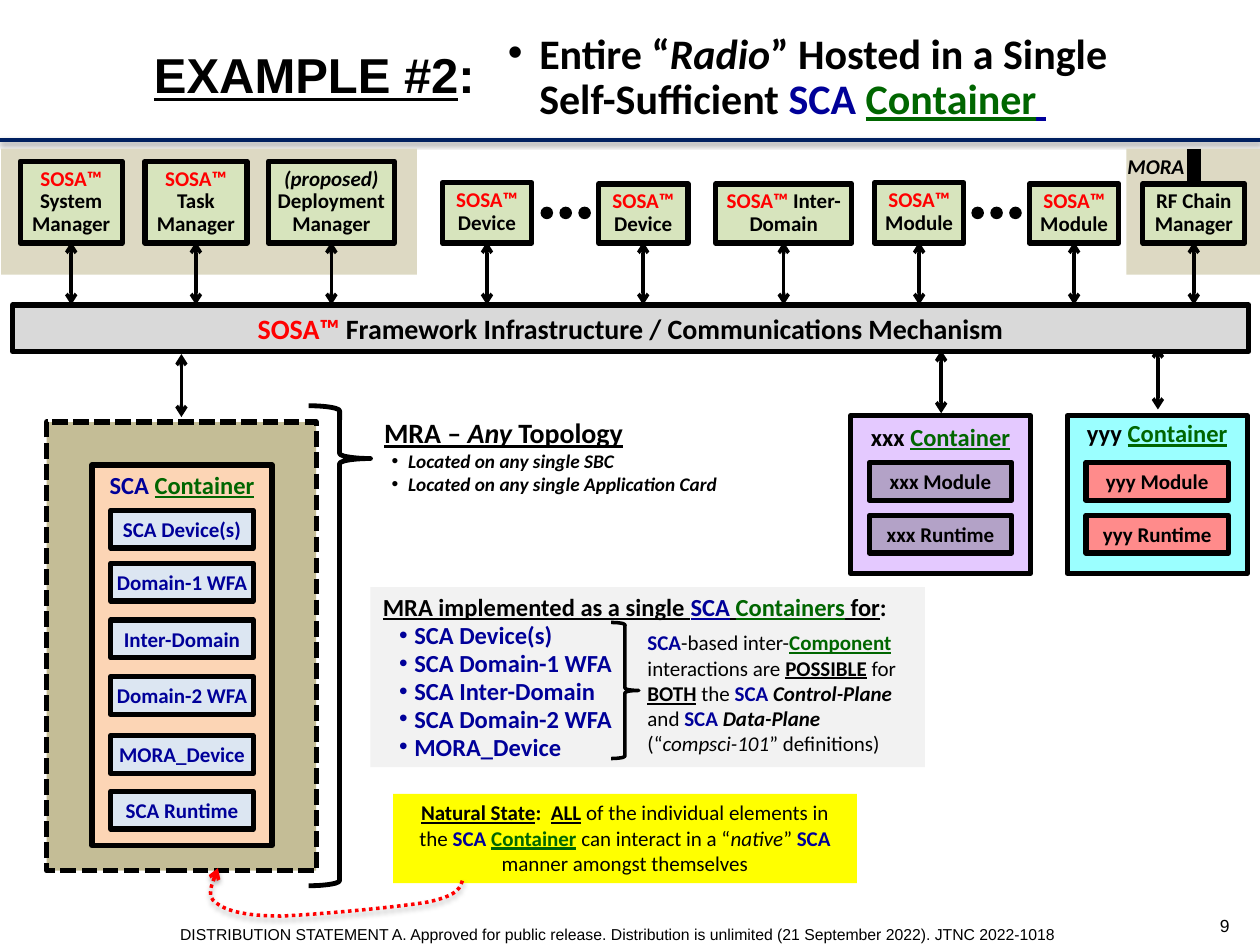
from lxml.etree import SubElement
from pptx import Presentation
from pptx.dml.color import RGBColor
from pptx.enum.dml import MSO_LINE as DASH
from pptx.enum.shapes import MSO_CONNECTOR, MSO_SHAPE as SHAPE
from pptx.enum.text import MSO_ANCHOR as ANCHOR, MSO_AUTO_SIZE, PP_ALIGN as ALIGN
from pptx.oxml.ns import qn
from pptx.util import Inches, Pt

BLACK, RED, NAVY, GREEN = "000000", "FF0000", "000099", "006600"
SAND, OLIVE, BLUE = "DDD9C3", "D7E4BD", "DCE6F2"

HEADING = [("Entire “", "b"), ("Radio", "bi"), ("” Hosted in a Single Self-Sufficient ", "b"),
           ("SCA ", "b", NAVY), ("Container", "bu", GREEN), (" ", "bu", NAVY)]
EXAMPLE = [("EXAMPLE #2", "bu"), (":", "b")]
FOOTER = ("DISTRIBUTION STATEMENT A. Approved for public release. "
          "Distribution is unlimited (21 September 2022). JTNC 2022-1018")
PAGE_NUMBER = "9"

SOSA = ("SOSA™ ", "b", RED)
MANAGERS = [
    (0.16, 1.28, 0.81, [SOSA, ("System Manager", "b")]),
    (1.15, 1.28, 0.81, [SOSA, ("Task Manager", "b")]),
    (2.13, 1.28, 1, [("(proposed) ", "bi"), ("Deployment Manager", "b")]),
    (3.51, 1.45, 0.71, [SOSA, ("Device", "b")]),
    (4.75, 1.46, 0.71, [SOSA, ("Device", "b")]),
    (5.68, 1.46, 1.08, [SOSA, ("Inter-Domain", "b")]),
    (6.94, 1.45, 0.71, [SOSA, ("Module", "b")]),
    (8.17, 1.46, 0.71, [SOSA, ("Module", "b")]),
    (9.07, 1.46, 0.81, [("RF Chain Manager", "b")]),
]
MANAGER_BOTTOM = 1.93
MANAGER_ZONES = [(0.01, 1.18, 3.3, 1), (8.94, 1.18, 1.06, 1)]
ELLIPSIS_STARTS = [4.29, 7.71]
FRAMEWORK = [SOSA, ("Framework Infrastructure / Communications Mechanism", "b")]

CONTAINERS = [
    {"name": "SCA", "colour": NAVY, "box": (0.73, 3.69, 1.43, 3.02), "title_top": 3.68,
     "fill": "FCD5B5", "part_fill": BLUE, "arrow": (1.44, 2.81),
     "parts": [("SCA Device(s)", 4.05), ("Domain-1 WFA", 4.47), ("Inter-Domain", 4.92),
               ("Domain-2 WFA", 5.37), ("MORA_Device", 5.84), ("SCA Runtime", 6.28)]},
    {"name": "xxx", "colour": BLACK, "box": (6.75, 3.3, 1.43, 1.25), "title_top": 3.3,
     "fill": "E4C9FF", "part_fill": "B3A2C7", "arrow": (7.47, 2.78),
     "parts": [("xxx Module", 3.67), ("xxx Runtime", 4.09)]},
    {"name": "yyy", "colour": BLACK, "box": (8.47, 3.3, 1.43, 1.25), "title_top": 3.27,
     "fill": "9BFFFF", "part_fill": "FF8B8B", "arrow": (9.19, 2.75),
     "parts": [("yyy Module", 3.67), ("yyy Runtime", 4.09)]},
]

TOPOLOGY = [("MRA – ", "bu"), ("Any", "biu"), (" Topology", "bu")]
LOCATIONS = ["Located on any single SBC", "Located on any single Application Card"]
MRA_LEAD = [("MRA implemented as a single ", "bu"), ("SCA", "bu", NAVY), (" ", "bu"),
            ("Containers", "bu", GREEN), (" for", "bu"), (":", "b")]
MRA_PARTS = ["SCA Device(s)", "SCA Domain-1 WFA", "SCA Inter-Domain", "SCA Domain-2 WFA",
             "MORA_Device"]
INTERACTIONS = [("SCA", "b", NAVY), ("-based inter-", ""), ("Component", "bu", GREEN),
                (" interactions are ", ""), ("POSSIBLE", "bu"), (" for ", ""), ("BOTH", "bu"),
                (" the ", ""), ("SCA ", "b", NAVY), ("Control-Plane", "bi"), (" and ", ""),
                ("SCA ", "b", NAVY), ("Data-Plane", "bi")]
DEFINITIONS = [("(“", ""), ("compsci-101", "i"), ("” definitions)", "")]
NATURAL_STATE = [("Natural State", "bu"), (":  ", "b"), ("ALL", "bu"),
                 (" of the individual elements in the ", ""), ("SCA ", "b", NAVY),
                 ("Container", "bu", GREEN), (" can interact in a “", ""), ("native", "i"),
                 ("” ", ""), ("SCA ", "b", NAVY), ("manner amongst themselves", "")]
LOOP_START = (3.67, 6.99)
LOOP_CURVES = [((3.65, 7.05), (3.63, 7.11), (3.39, 7.16)),
               ((3.15, 7.2), (2.51, 7.26), (2.23, 7.27)),
               ((1.95, 7.27), (1.79, 7.23), (1.71, 7.16)),
               ((1.62, 7.1), (1.71, 6.97), (1.73, 6.89))]


def rgb(colour):
    return RGBColor.from_string(colour)


def style(font, marks="", colour=BLACK):
    font.bold, font.italic, font.underline = "b" in marks, "i" in marks, "u" in marks
    font.color.rgb = rgb(colour)


def para(runs, size=12, align=ALIGN.CENTER, spacing=None, indent=None, font="Calibri"):
    return dict(runs=runs, size=size, align=align, spacing=spacing, indent=indent, font=font)


def write(shape, paras, anchor=ANCHOR.TOP, insets=(0.1, 0.05, 0.1, 0.05), wrap=True):
    frame = shape.text_frame
    frame.auto_size, frame.word_wrap, frame.vertical_anchor = MSO_AUTO_SIZE.NONE, wrap, anchor
    (frame.margin_left, frame.margin_top,
     frame.margin_right, frame.margin_bottom) = map(Inches, insets)
    for i, content in enumerate(paras):
        paragraph = frame.add_paragraph() if i else frame.paragraphs[0]
        paragraph.alignment = content["align"]
        if content["spacing"]:
            paragraph.line_spacing = Pt(content["spacing"])
        if content["indent"]:
            margin, hang = content["indent"]
            props = paragraph._p.get_or_add_pPr()
            props.set("marL", str(Inches(margin)))
            props.set("indent", str(Inches(-hang)))
            SubElement(props, qn("a:buFont"), typeface="Arial")
            SubElement(props, qn("a:buChar"), char="•")
        paragraph.font.name, paragraph.font.size = content["font"], Pt(content["size"])
        shared = len({run[1:] for run in content["runs"]}) == 1
        if shared:
            style(paragraph.font, *content["runs"][0][1:])
        for text, *look in content["runs"]:
            run = paragraph.add_run()
            run.text = text
            if not shared:
                style(run.font, *look)


def text_box(at, paras, **options):
    write(slide.shapes.add_textbox(*map(Inches, at)), paras, **options)


def outline(line, width, colour=BLACK):
    line.color.rgb, line.width = rgb(colour), Pt(width)


def block(at, fill=None, width=0, kind=SHAPE.RECTANGLE):
    shape = slide.shapes.add_shape(kind, *map(Inches, at))
    shape.shadow.inherit = False
    if fill:
        shape.fill.solid()
        shape.fill.fore_color.rgb = rgb(fill)
    else:
        shape.fill.background()
    if width:
        outline(shape.line, width)
    else:
        shape.line.fill.background()
    return shape


def arrowheads(line, *ends):
    for end in ends:
        SubElement(line._get_or_add_ln(), qn(f"a:{end}"), type="arrow")


def drop_shadow(effects, alpha, distance):
    shadow = SubElement(effects, qn("a:outerShdw"), blurRad=str(Pt(3.1)),
                        dist=str(Pt(distance)), dir="5400000", rotWithShape="0")
    tint = SubElement(shadow, qn("a:srgbClr"), val=BLACK)
    SubElement(tint, qn("a:alpha"), val=str(alpha * 1000))


def connect(start, end, width=2, colour=BLACK):
    link = slide.shapes.add_connector(MSO_CONNECTOR.STRAIGHT, *map(Inches, start + end))
    outline(link.line, width, colour)
    return link, SubElement(link._element.spPr, qn("a:effectLst"))


def double_arrow(x, top, length=0.5):
    link, effects = connect((x, top), (x, top + length))
    arrowheads(link.line, "headEnd", "tailEnd")


def curve_points(start, curves, steps=12):
    for a, b, end in curves:
        for t in (n / steps for n in range(1, steps + 1)):
            s = 1 - t
            yield tuple(Inches(s**3 * p + 3 * s * s * t * q + 3 * s * t * t * r + t**3 * e)
                        for p, q, r, e in zip(start, a, b, end))
        start = end


deck = Presentation()
deck.slide_width, deck.slide_height = Inches(10), Inches(7.5)
slide = deck.slides.add_slide(deck.slide_layouts[5])

rule, rule_effects = connect((0, 1.11), (10, 1.11), colour="002060")
drop_shadow(rule_effects, 38, 1.6)
heading = slide.shapes.title
heading.left, heading.top, heading.width, heading.height = map(Inches, (3.93, 0.09, 5.01, 1.05))
write(heading, [para(HEADING, 24, ALIGN.LEFT, 26, (0.25, 0.25))], anchor=ANCHOR.MIDDLE)
text_box((0.78, 0.09, 3.43, 1.05), [para(EXAMPLE, 28, spacing=30, font="Arial")],
         anchor=ANCHOR.MIDDLE)
text_box((0, 7.34, 10, 0.15), [para([(FOOTER, "")], 9, font="Arial")], insets=(0, 0, 0.2, 0))
text_box((9.45, 7.19, 0.54, 0.31), [para([(PAGE_NUMBER, "")], 10, font="Arial")],
         anchor=ANCHOR.MIDDLE)

mra_frame = block((0.37, 3.35, 2.14, 3.56), "C4BD96", 3)
mra_frame.line.dash_style = DASH.SQUARE_DOT
for container in CONTAINERS:
    left, top, width, height = container["box"]
    block(container["box"], container["fill"], 3)
    title = [(container["name"] + " ", "b", container["colour"]), ("Container", "bu", GREEN)]
    text_box((left, container["title_top"], width, 0.34), [para(title, 14)], wrap=False)
    for name, part_top in container["parts"]:
        part = block((left + 0.15, part_top, 1.13, 0.3), container["part_fill"], 3)
        write(part, [para([(name, "b", container["colour"])])], insets=(0, 0.05, 0, 0.05))
    double_arrow(*container["arrow"])

mra_brace = block((2.45, 3.22, 0.49, 3.81), width=2.75, kind=SHAPE.RIGHT_BRACE)
mra_brace.adjustments[0], mra_brace.adjustments[1] = 0.083, 0.11
text_box((2.95, 3.25, 2.86, 0.74),
         [para(TOPOLOGY, 16, ALIGN.LEFT)]
         + [para([(place, "bi")], 11, ALIGN.LEFT, indent=(0.19, 0.13)) for place in LOCATIONS],
         wrap=False)
write(block((2.94, 4.66, 4.4, 1.43), "F2F2F2"),
      [para(MRA_LEAD, 14, ALIGN.LEFT, 16)]
      + [para([(part, "b", NAVY)], 14, ALIGN.LEFT, 16, (0.25, 0.12)) for part in MRA_PARTS],
      insets=(0.1, 0.05, 0.1, 0.03))
block((4.85, 4.94, 0.22, 1.08), width=2, kind=SHAPE.RIGHT_BRACE)
text_box((5.04, 4.95, 2.38, 1.11),
         [para(runs, align=ALIGN.LEFT) for runs in (INTERACTIONS, DEFINITIONS)])

write(block((0.1, 2.42, 9.81, 0.37), "D9D9D9", 3), [para(FRAMEWORK, 16)], anchor=ANCHOR.MIDDLE)
for zone in MANAGER_ZONES:
    block(zone, SAND)
for left, top, width, runs in MANAGERS:
    double_arrow(left + width / 2, MANAGER_BOTTOM - 0.01)
    manager = block((left, top, width, MANAGER_BOTTOM - top), OLIVE, 3)
    write(manager, [para(runs, spacing=13)], insets=(0, 0.05, 0, 0.05))
for start in ELLIPSIS_STARTS:
    for n in range(3):
        block((start + 0.15 * n, 1.64, 0.1, 0.1), BLACK, kind=SHAPE.OVAL)
connect((9.48, 1.18), (9.48, 1.45), 8)
text_box((8.85, 1.17, 0.66, 0.3), [para([("MORA", "bi")], align=ALIGN.LEFT)], wrap=False)

write(block((3.12, 6.3, 3.68, 0.71), "FFFF00"), [para(NATURAL_STATE)])
builder = slide.shapes.build_freeform(*map(Inches, LOOP_START))
builder.add_line_segments(curve_points(LOOP_START, LOOP_CURVES), close=False)
loop = builder.convert_to_shape()
loop.shadow.inherit = False
loop.fill.background()
outline(loop.line, 2, RED)
loop.line.dash_style = DASH.ROUND_DOT
arrowheads(loop.line, "tailEnd")
drop_shadow(loop._element.spPr.find(qn("a:effectLst")), 35, 1.8)

deck.save("out.pptx")
